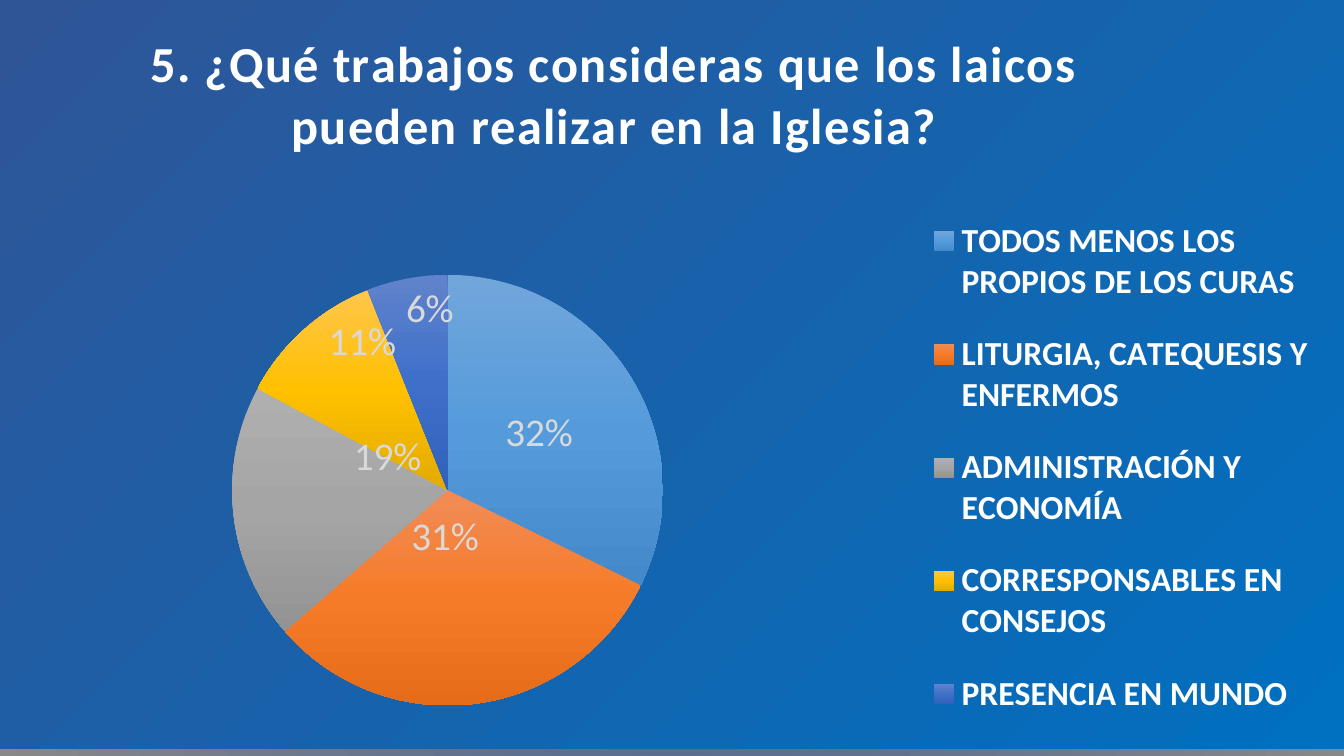
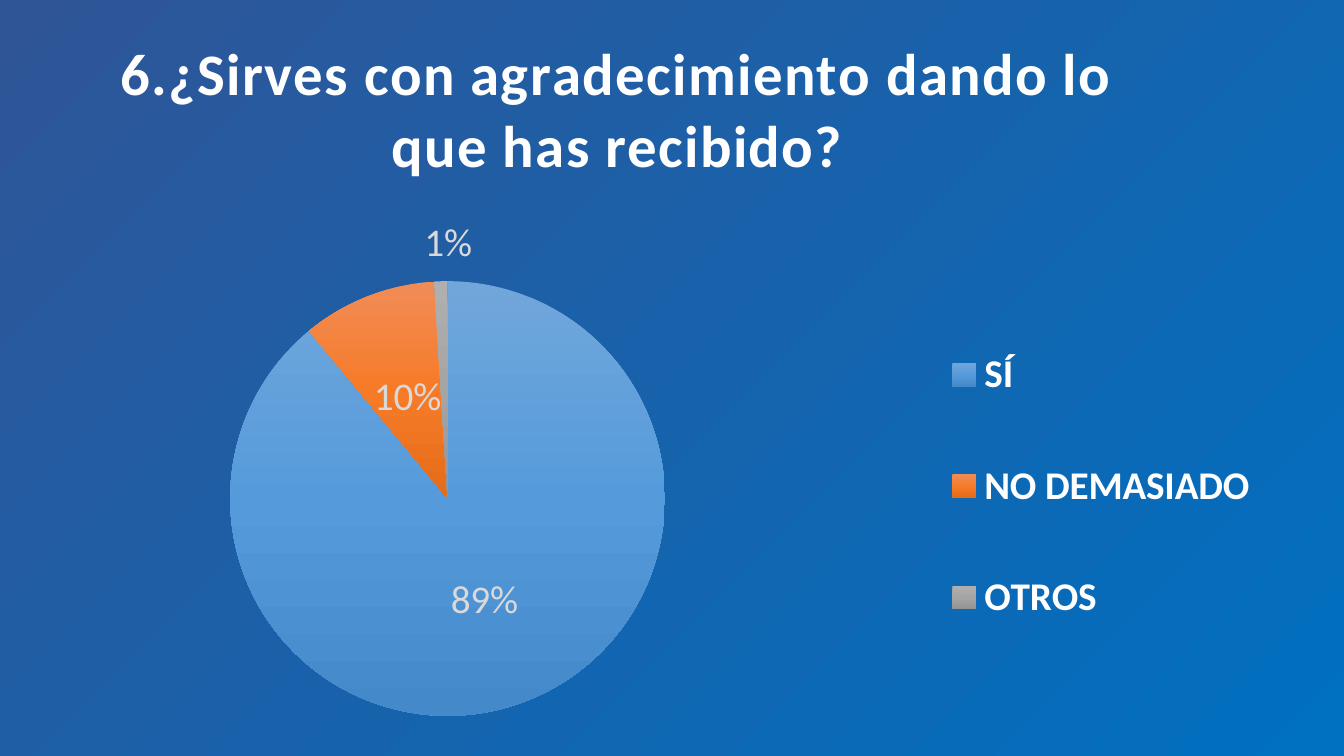
from copy import deepcopy

from lxml import etree
from pptx import Presentation
from pptx.chart import data as chart_data
from pptx.dml.color import RGBColor
from pptx.enum import chart as charts
from pptx.oxml import parse_xml
from pptx.oxml.ns import nsdecls, qn
from pptx.util import Pt

WIDTH, HEIGHT = 960, 540


def color(value):
    return RGBColor.from_string(value)


def gradient(stops, center=None, angle=90):
    """Gradient fill: circular around center (l, t, r, b), else linear."""
    marks = "".join(
        f'<a:gs pos="{place * 1000}"><a:srgbClr val="{value}"/></a:gs>'
        for place, value in stops)
    if center:
        sides = " ".join(f'{side}="{share * 1000}"'
                         for side, share in zip("ltrb", center))
        shade = f'<a:path path="circle"><a:fillToRect {sides}/></a:path>'
    else:
        shade = f'<a:lin ang="{angle * 60000}" scaled="0"/>'
    return parse_xml(f'<a:gradFill {nsdecls("a")} rotWithShape="1">'
                     f'<a:gsLst>{marks}</a:gsLst>{shade}</a:gradFill>')


def place(element, index, modes=(), **percents):
    """Give a chart part a manual layout in percent of the chart's size."""
    for old in element.findall(qn("c:layout")):
        element.remove(old)
    layout = etree.Element(qn("c:layout"))
    manual = etree.SubElement(layout, qn("c:manualLayout"))
    shares = [(tag, round(value / 100, 4)) for tag, value in percents.items()]
    for tag, value in [*modes, *shares]:
        etree.SubElement(manual, qn(f"c:{tag}")).set("val", str(value))
    element.insert(index, layout)


class SurveyDeck:
    FONT = "Calibri"
    WHITE, LABEL = "FFFFFF", "D9D9D9"
    BACKDROP = [(0, "2F5597"), (100, "898888")]
    PANEL = [(0, "0070C0"), (100, "2F5597"), (100, "9DC3E6")]
    SLICES = [("71A6DB", "559BDB", "448ACA"),
              ("F18C57", "F67B28", "E56C19"),
              ("AFAFAF", "A5A5A5", "939393"),
              ("FFC64B", "FFC000", "E3AB00"),
              ("6183CB", "3E70CA", "3062BB")]
    EDGES = [("xMode", "edge"), ("yMode", "edge")]

    def __init__(self):
        self.deck = Presentation()
        self.deck.slide_width, self.deck.slide_height = Pt(WIDTH), Pt(HEIGHT)
        self.page = None

    def style(self, font, size, value, bold=False):
        font.name, font.size, font.bold = self.FONT, Pt(size), bold
        font.color.rgb = color(value)

    def add_page(self):
        self.page = self.deck.slides.add_slide(self.deck.slide_layouts[6])
        self.page.background.fill.gradient()
        fill = self.page._element.find(".//" + qn("a:gradFill"))
        fill.getparent().replace(fill, gradient(self.BACKDROP, (50,) * 4))

    def add_pie(self, answers, height, top):
        data = chart_data.CategoryChartData()
        data.categories = list(answers)
        data.add_series("Series 1", list(answers.values()))
        chart = self.page.shapes.add_chart(
            charts.XL_CHART_TYPE.PIE, 0, 0, Pt(WIDTH), Pt(height), data).chart
        self.style(chart.font, 10, "000000")

        # Panel behind the pie
        panel = parse_xml(f'<c:spPr {nsdecls("c", "a")}/>')
        panel.append(gradient(self.PANEL, (100, 100, 0, 0)))
        etree.SubElement(etree.SubElement(panel, qn("a:ln")), qn("a:noFill"))
        chart._chartSpace.chart.addnext(panel)

        # Slices
        plot = chart.plots[0]
        plot.vary_by_categories = True
        place(chart._chartSpace.chart.plotArea, 0,
              [("layoutTarget", "inner"), *self.EDGES],
              x=0, y=top, w=66.6, h=57.5)
        series = plot.series[0]
        for index, shades in enumerate(self.SLICES[:len(answers)]):
            point = series._element.get_or_add_dPt_for_point(index)
            point.get_or_add_spPr().append(
                gradient(list(zip((0, 50, 100), shades))))
        return chart

    def add_title(self, chart, words, size, x, y):
        title = chart.chart_title
        span = title.text_frame.paragraphs[0].add_run()
        span.text = words
        self.style(span.font, size, self.WHITE, bold=True)
        span.font._element.set("spc", "100")
        place(title._element, 1, self.EDGES, x=x, y=y)

    def add_legend(self, chart, size, **area):
        chart.has_legend = True
        legend = chart.legend
        legend.position = charts.XL_LEGEND_POSITION.BOTTOM
        legend.include_in_layout = False
        self.style(legend.font, size, self.WHITE, bold=True)
        place(legend._element, 1, self.EDGES, **area)

    def add_labels(self, chart, shifts):
        """Percentages on the slices; shifts moves some of them by (x, y)."""
        labels = chart.plots[0].series[0].data_labels
        labels.show_percentage, labels.show_value = True, False
        labels.show_legend_key = False
        labels.position = charts.XL_LABEL_POSITION.CENTER
        self.style(labels.font, 28, self.LABEL)
        shared = [deepcopy(part) for part in labels._element
                  if part.tag != qn("c:showLeaderLines")]
        for order, (index, (x, y)) in enumerate(shifts.items()):
            label = etree.Element(qn("c:dLbl"))
            etree.SubElement(label, qn("c:idx")).set("val", str(index))
            place(label, 1, x=x, y=y)
            label.extend(deepcopy(shared))
            labels._element.insert(order, label)


def main():
    survey = SurveyDeck()

    # Question 5
    survey.add_page()
    chart = survey.add_pie({
        "TODOS MENOS LOS PROPIOS DE LOS CURAS": 32,
        "LITURGIA, CATEQUESIS Y ENFERMOS": 31,
        "ADMINISTRACIÓN Y ECONOMÍA": 19,
        "CORRESPONSABLES EN CONSEJOS": 11,
        "PRESENCIA EN MUNDO": 6}, height=535, top=36.7)
    survey.add_title(
        chart, "5. ¿Qué trabajos consideras que los laicos pueden realizar "
        "en la Iglesia?", 36, x=10.5, y=2.5)
    survey.add_legend(chart, 24, x=68.4, y=25.3, w=30, h=74.3)
    survey.add_labels(chart, {1: (-1.2, -8), 2: (3.5, -6),
                              3: (-1, -9), 4: (0.2, -10)})

    # Question 6
    survey.add_page()
    chart = survey.add_pie({"SÍ": 89, "NO DEMASIADO": 10, "OTROS": 1},
                           height=HEIGHT, top=37.2)
    survey.add_title(
        chart, "6.¿Sirves con agradecimiento dando lo que has recibido?",
        42, x=8.2, y=3)
    survey.add_legend(chart, 28, x=68.4, y=38, w=27, h=52.6)
    survey.add_labels(chart, {2: (0.3, -19.4)})

    survey.deck.save("out.pptx")


if __name__ == "__main__":
    main()
